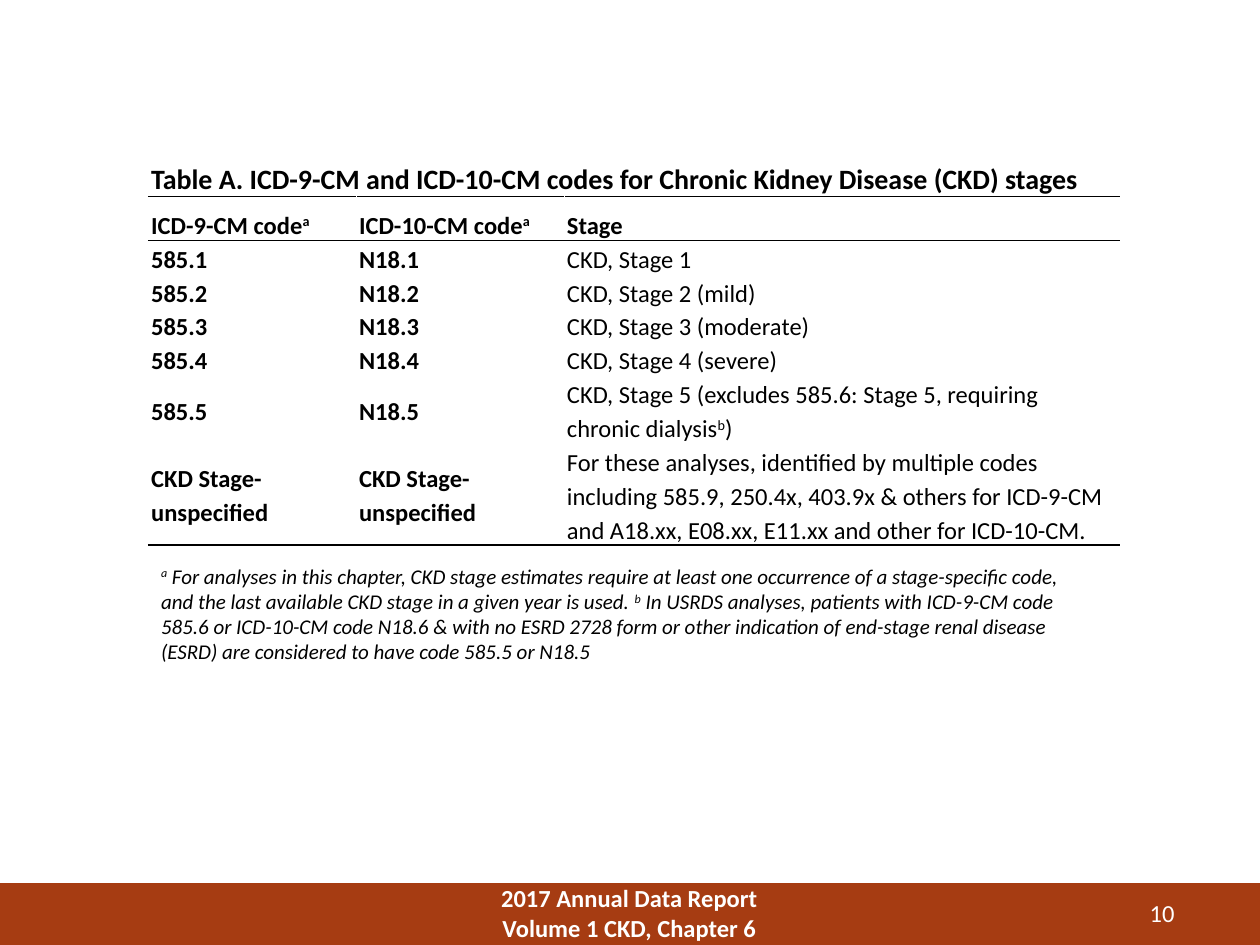
"""Build a slide with a table of CKD stage codes, its footnote and a report footer."""
from dataclasses import dataclass

import lxml.etree
import pptx
import pptx.dml.color
import pptx.enum.shapes
import pptx.enum.text
import pptx.oxml.ns
import pptx.util
from pptx.util import Inches


@dataclass(frozen=True)
class Theme:
    font: str = "Calibri"
    ink: str = "000000"
    paper: str = "FFFFFF"
    band: str = "A63C12"
    caption_size: int = 16
    text_size: int = 14
    note_size: int = 12


theme = Theme()


def write(paragraph, text, size, color, bold=False, italic=False):
    for index, part in enumerate(text.split("^")):
        if not part:
            continue
        run = paragraph.add_run()
        run.text = part
        run.font.name = theme.font
        run.font.size = pptx.util.Pt(size)
        run.font.bold = bold
        run.font.italic = italic
        run.font.color.rgb = pptx.dml.color.RGBColor.from_string(color)
        if index % 2:
            run.font._element.set("baseline", "30000")


def add_border(cell, side):
    line = lxml.etree.Element(pptx.oxml.ns.qn(f"a:{side}"), w=str(pptx.util.Pt(1)))
    fill = lxml.etree.SubElement(line, pptx.oxml.ns.qn("a:solidFill"))
    lxml.etree.SubElement(fill, pptx.oxml.ns.qn("a:srgbClr"), val=theme.ink)
    properties = cell._tc.get_or_add_tcPr()
    properties.insert(len(properties.findall(pptx.oxml.ns.qn("a:lnT"))), line)


presentation = pptx.Presentation()
presentation.slide_width = Inches(10)
presentation.slide_height = Inches(7.5)
slide = presentation.slides.add_slide(presentation.slide_layouts[6])

band = slide.shapes.add_shape(
    pptx.enum.shapes.MSO_SHAPE.RECTANGLE, Inches(0), Inches(7.01), Inches(10), Inches(0.5)
)
band.shadow.inherit = False
band.fill.solid()
band.fill.fore_color.rgb = pptx.dml.color.RGBColor.from_string(theme.band)
band.line.fill.background()

center = pptx.enum.text.PP_ALIGN.CENTER
right = pptx.enum.text.PP_ALIGN.RIGHT
left = pptx.enum.text.PP_ALIGN.LEFT
footnote = (
    "^a^ For analyses in this chapter, CKD stage estimates require at least one occurrence "
    "of a stage-specific code, and the last available CKD stage in a given year is used. "
    "^b^ In USRDS analyses, patients with ICD-9-CM code 585.6 or ICD-10-CM code N18.6 & with "
    "no ESRD 2728 form or other indication of end-stage renal disease (ESRD) are considered "
    "to have code 585.5 or N18.5"
)
report_lines = ["2017 Annual Data Report", "Volume 1 CKD, Chapter 6"]
text_boxes = [
    ((3.58, 6.96, 2.83, 0.54), report_lines, center, theme.text_size, theme.paper, True, False),
    ((8.42, 7.08, 1, 0.3), ["10"], right, theme.text_size, theme.paper, False, False),
    ((1.18, 4.42, 7.57, 0.91), [footnote], left, theme.note_size, theme.ink, False, True),
]
for position, lines, alignment, size, color, bold, italic in text_boxes:
    text_box = slide.shapes.add_textbox(*map(Inches, position))
    text_frame = text_box.text_frame
    text_frame.word_wrap = True
    for index, line in enumerate(lines):
        paragraph = text_frame.add_paragraph() if index else text_frame.paragraphs[0]
        paragraph.alignment = alignment
        write(paragraph, line, size, color, bold, italic)

rows = [
    ("Table A. ICD-9-CM and ICD-10-CM codes for Chronic Kidney Disease (CKD) stages", "", ""),
    ("ICD-9-CM code^a", "ICD-10-CM code^a", "Stage"),
    ("585.1", "N18.1", "CKD, Stage 1"),
    ("585.2", "N18.2", "CKD, Stage 2 (mild)"),
    ("585.3", "N18.3", "CKD, Stage 3 (moderate)"),
    ("585.4", "N18.4", "CKD, Stage 4 (severe)"),
    (
        "585.5",
        "N18.5",
        "CKD, Stage 5 (excludes 585.6: Stage 5, requiring chronic dialysis^b^)",
    ),
    (
        "CKD Stage-unspecified",
        "CKD Stage-unspecified",
        "For these analyses, identified by multiple codes including 585.9, 250.4x, 403.9x "
        "& others for ICD-9-CM and A18.xx, E08.xx, E11.xx and other for ICD-10-CM.",
    ),
]
last_row = len(rows) - 1
table = slide.shapes.add_table(
    len(rows), 3, Inches(1.18), Inches(1.29), Inches(7.7), Inches(2.04)
).table
table.first_row = False
table.horz_banding = False
for column, width in zip(table.columns, (1.65, 1.65, 4.4)):
    column.width = Inches(width)
table.cell(0, 0).merge(table.cell(0, 2))

for row_index, texts in enumerate(rows):
    table.rows[row_index].height = Inches(0.27 if row_index < 2 else 0.25)
    for column_index, text in enumerate(texts):
        cell = table.cell(row_index, column_index)
        cell.margin_left = cell.margin_right = Inches(0.02)
        cell.margin_top = Inches(0.08 if row_index == 1 else 0)
        cell.margin_bottom = Inches(0)
        if row_index in (1, 2):
            add_border(cell, "lnT")
        if row_index in (0, 1, last_row):
            add_border(cell, "lnB")
        cell.fill.background()
        paragraph = cell.text_frame.paragraphs[0]
        if row_index:
            cell.vertical_anchor = pptx.enum.text.MSO_ANCHOR.MIDDLE
            paragraph.line_spacing = 1.15
        size = theme.text_size if row_index else theme.caption_size
        bold = row_index < 2 or column_index < 2
        write(paragraph, text, size, theme.ink, bold)

presentation.save("out.pptx")
